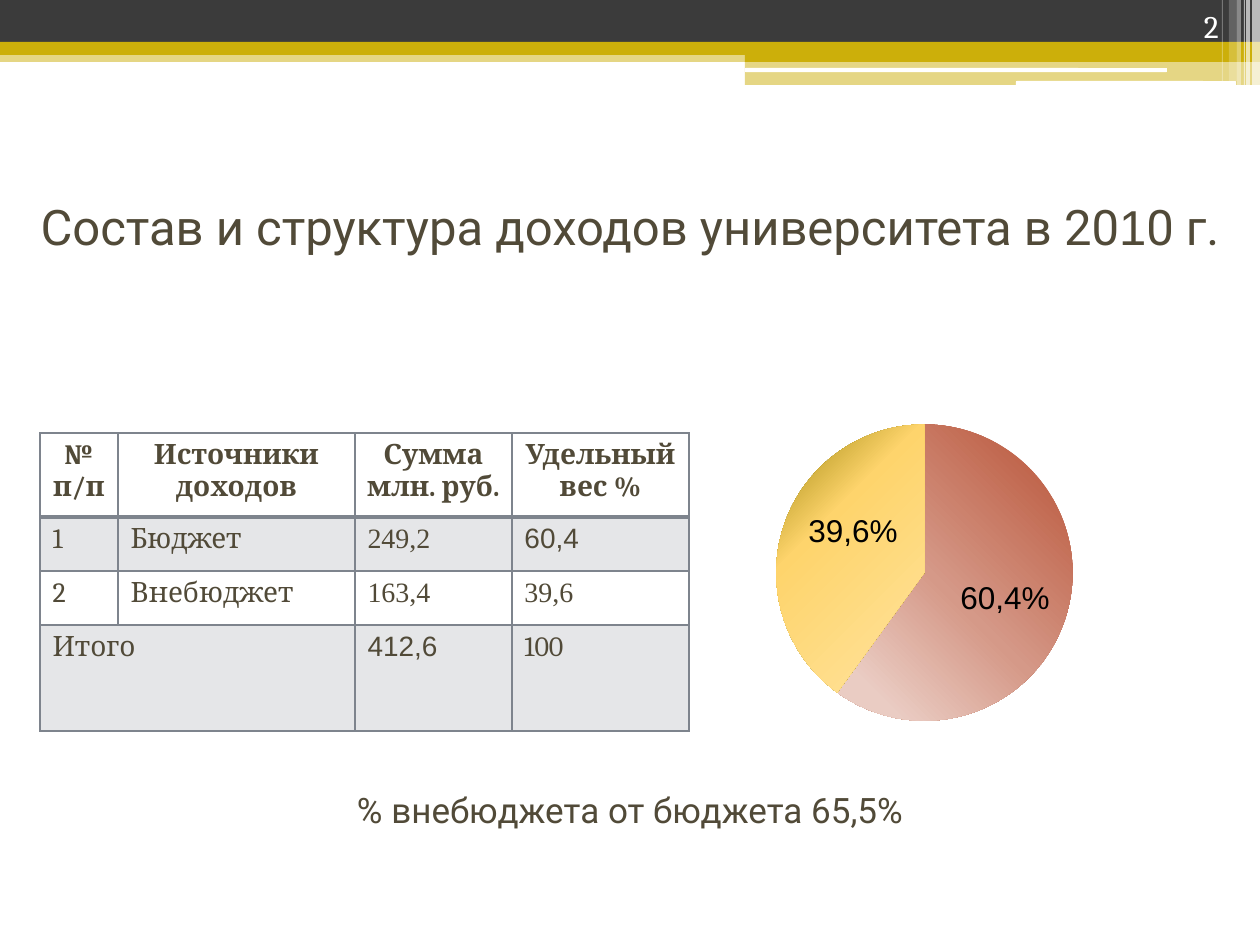
"""Build a slide on university income with a table and a pie chart."""
import dataclasses
import typing

import lxml.etree
import pptx
import pptx.chart.data
import pptx.dml.color
import pptx.enum.chart
import pptx.enum.shapes
import pptx.enum.text
import pptx.oxml.ns
import pptx.util

SCALE = 914400 / 126
INK, GOLD, WHITE, GREY, BAND = "514A38", "CCAF0A", "FFFFFF", "7E848D", "E5E6E8"
ALIGN = pptx.enum.text.PP_ALIGN
ANCHOR = pptx.enum.text.MSO_ANCHOR
SHAPE = pptx.enum.shapes.MSO_SHAPE


@dataclasses.dataclass
class Bar:
    """A filled strip of the header, with opacity in percent."""
    left: int
    top: int
    width: int
    height: int
    fill: str = WHITE
    alpha: int = 100
    kind: typing.Any = SHAPE.RECTANGLE


@dataclasses.dataclass
class Slice:
    """A pie slice with its gradient, label and label place."""
    name: str
    value: int
    stops: list[tuple[int, str]]
    focus: dict[str, int]
    label: str
    left: int
    top: int


BARS = [
    Bar(0, 50, 1260, 12, GOLD, 50),
    Bar(0, 0, 1260, 42, "3B3B3B"),
    Bar(0, 42, 1260, 13, GOLD),
    Bar(745, 49, 515, 13, GOLD),
    Bar(745, 61, 515, 24, GOLD, 50),
    Bar(745, 68, 422, 4, kind=SHAPE.ROUNDED_RECTANGLE),
    Bar(1016, 81, 220, 5, kind=SHAPE.ROUNDED_RECTANGLE),
    Bar(1252, 0, 8, 85, alpha=65),
    Bar(1246, 0, 4, 85, alpha=65),
    Bar(1244, 0, 1, 85, alpha=60),
    Bar(1237, 0, 4, 85, alpha=40),
    Bar(1229, 0, 8, 81, alpha=20),
    Bar(1222, 0, 1, 81, alpha=30),
]
SLICES = [
    Slice("1", 60, [(12, "EACCC3"), (45, "D59988"), (85, "C0654C")],
          {"t": 100, "r": 100}, "60,4%", 948, 572),
    Slice("2", 40, [(0, "FFE39D"), (65, "FED46C"), (100, "998307")],
          {"l": 100, "t": 100}, "39,6%", 796, 505),
]
COLS = [78, 237, 157, 177]
ROWS = [84, 54, 54, 106]
CELLS = [
    ["№ п/п", "Источники доходов", "Сумма млн. руб.", "Удельный вес %"],
    ["1", "Бюджет", "249,2", "60,4"],
    ["2", "Внебюджет", "163,4", "39,6"],
    ["Итого", "", "412,6", "100"],
]
FONTS = {(1, 2): "Times New Roman", (1, 3): "Arial", (2, 2): "Times New Roman",
         (2, 3): "Times New Roman", (3, 2): "Arial"}


def px(size: int) -> int:
    """Turn pixels into EMU."""
    return round(size * SCALE)


def box(*sizes: int) -> list[int]:
    """Turn several pixel lengths into EMU."""
    return [px(size) for size in sizes]


def hue(code: str) -> pptx.dml.color.RGBColor:
    """Turn a hex string into a colour."""
    return pptx.dml.color.RGBColor.from_string(code)


def node(host, tag: str, **attrs):
    """Add an XML child with the given attributes."""
    return lxml.etree.SubElement(
        host, pptx.oxml.ns.qn(tag), {key: str(val) for key, val in attrs.items()})


def write(frame, text: str, size: float = 16, font: str = "Cambria",
          color: str = INK, bold: bool = False, align=ALIGN.LEFT) -> None:
    """Add a formatted run to the first paragraph of a frame."""
    para = frame.paragraphs[0]
    para.alignment = align
    run = para.add_run()
    run.text = text
    run.font.size = pptx.util.Pt(size)
    run.font.name = font
    run.font.bold = bold
    run.font.color.rgb = hue(color)


def label(slide, place: list[int], text: str, wrap: bool = True,
          anchor=ANCHOR.TOP, **style) -> None:
    """Add a text box."""
    frame = slide.shapes.add_textbox(*place).text_frame
    frame.word_wrap = wrap
    frame.vertical_anchor = anchor
    write(frame, text, **style)


def strip(slide, bar: Bar) -> None:
    """Draw one strip of the header."""
    shape = slide.shapes.add_shape(
        bar.kind, *box(bar.left, bar.top, bar.width, bar.height))
    shape.shadow.inherit = False
    shape.line.fill.background()
    shape.fill.solid()
    shape.fill.fore_color.rgb = hue(bar.fill)
    if bar.alpha < 100:
        color = shape.fill._xPr.find(".//" + pptx.oxml.ns.qn("a:srgbClr"))
        node(color, "a:alpha", val=bar.alpha * 1000)


def edge(cell, row: int) -> None:
    """Draw the borders of a cell, thicker below the heading row."""
    props = cell._tc.get_or_add_tcPr()
    for index, side in enumerate("LRTB"):
        thick = (side, row) in (("B", 0), ("T", 1))
        line = node(props, "a:ln" + side, w=25400 if thick else 12700)
        node(node(line, "a:solidFill"), "a:srgbClr", val=GREY)
        props.insert(index, line)


def grid(slide) -> None:
    """Draw the income table."""
    table = slide.shapes.add_table(
        len(ROWS), len(COLS), *box(40, 433, sum(COLS), sum(ROWS))).table
    for col, width in zip(table.columns, COLS):
        col.width = px(width)
    for row, height in zip(table.rows, ROWS):
        row.height = px(height)
    table.cell(3, 0).merge(table.cell(3, 1))
    for r, texts in enumerate(CELLS):
        for c, text in enumerate(texts):
            cell = table.cell(r, c)
            if r % 2:
                cell.fill.solid()
                cell.fill.fore_color.rgb = hue(BAND)
            else:
                cell.fill.background()
            edge(cell, r)
            if r == 0:
                cell.margin_left = cell.margin_right = px(6)
            if text:
                write(cell.text_frame, text, font=FONTS.get((r, c), "Cambria"),
                      bold=r == 0, align=ALIGN.LEFT if r else ALIGN.CENTER)


def pie(slide) -> None:
    """Draw the pie chart and its labels."""
    data = pptx.chart.data.CategoryChartData()
    data.categories = [part.name for part in SLICES]
    data.add_series("Series 1", [part.value for part in SLICES])
    chart = slide.shapes.add_chart(
        pptx.enum.chart.XL_CHART_TYPE.PIE, *box(663, 381, 539, 426), data).chart
    chart.has_title = chart.has_legend = False
    chart.font.size = pptx.util.Pt(18.5)
    chart.font.name = "Cambria"
    chart.font.color.rgb = hue("000000")
    plot = chart.plots[0]
    plot.vary_by_categories = True
    for index, part in enumerate(SLICES):
        look = plot.series[0].points[index].format
        look.line.fill.background()
        look.fill.gradient()
        grad = look.fill._xPr.find(pptx.oxml.ns.qn("a:gradFill"))
        grad.clear()
        stops = node(grad, "a:gsLst")
        for spot, code in part.stops:
            node(node(stops, "a:gs", pos=spot * 1000), "a:srgbClr", val=code)
        focus = {side: val * 1000 for side, val in part.focus.items()}
        node(node(grad, "a:path", path="circle"), "a:fillToRect", **focus)
    area = chart._chartSpace.chart.plotArea
    for old in area.findall(pptx.oxml.ns.qn("c:layout")):
        area.remove(old)
    layout = node(area, "c:layout")
    area.insert(0, layout)
    manual = node(layout, "c:manualLayout")
    rules = {"layoutTarget": "inner", "xMode": "edge", "yMode": "edge",
             "x": 0.21, "y": 0.1, "w": 0.55, "h": 0.7}
    for key, val in rules.items():
        node(manual, "c:" + key, val=val)
    for part in SLICES:
        label(slide, box(part.left, part.top, 115, 50), part.label, wrap=False,
              size=18, font="Arial", color="000000")


def main() -> None:
    """Build and save the deck."""
    deck = pptx.Presentation()
    deck.slide_width, deck.slide_height = box(1260, 945)
    slide = deck.slides.add_slide(deck.slide_layouts[5])
    for bar in BARS:
        strip(slide, bar)
    grid(slide)
    pie(slide)
    title = slide.shapes.title
    title.left, title.top, title.width, title.height = box(0, 177, 1260, 98)
    frame = title.text_frame
    frame.auto_size = pptx.enum.text.MSO_AUTO_SIZE.NONE
    frame.vertical_anchor = ANCHOR.MIDDLE
    for text, font in (("Состав и структура доходов университета в 20", "Roboto"),
                       ("1", "Arial"), ("0 г.", "Roboto")):
        write(frame, text, size=28, font=font, align=ALIGN.CENTER)
    label(slide, box(1126, 0, 105, 51), "2", anchor=ANCHOR.BOTTOM,
          size=18, color=WHITE, align=ALIGN.RIGHT)
    label(slide, box(0, 760, 1260, 98), "% внебюджета от бюджета 65,5%",
          anchor=ANCHOR.MIDDLE, size=20, font="Roboto", align=ALIGN.CENTER)
    deck.save("out.pptx")


if __name__ == "__main__":
    main()
